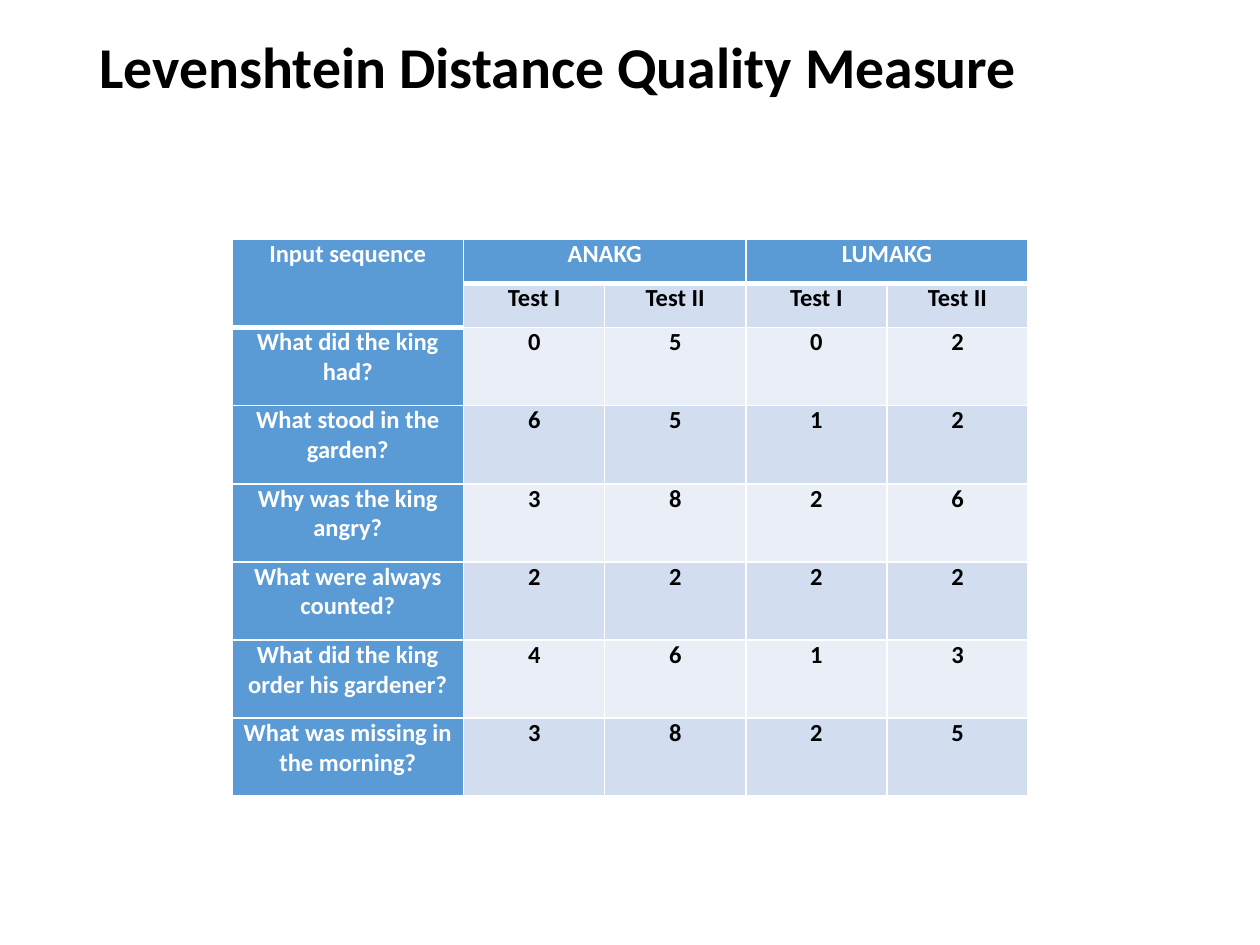
from dataclasses import dataclass

from lxml import etree
from pptx import Presentation
from pptx import util as u
from pptx.dml.color import RGBColor
from pptx.enum import text
from pptx.oxml.ns import qn


@dataclass(frozen=True)
class Theme:
    font: str = "Calibri"
    title_size: float = 33
    table_size: float = 14
    ink: str = "000000"
    paper: str = "FFFFFF"
    accent: str = "5B9BD5"
    bands: tuple = ("D2DEEF", "EAEFF7")
    thin: float = 1
    thick: float = 3


THEME = Theme()
COLUMN_WIDTHS = [1.84] + [1.12] * 4
ROW_HEIGHTS = [0.35] * 2 + [0.62] * 6
ROWS = [
    ("Input sequence", "ANAKG", "", "LUMAKG", ""),
    ("", "Test I", "Test II", "Test I", "Test II"),
    ("What did the king had?", "0", "5", "0", "2"),
    ("What stood in the garden?", "6", "5", "1", "2"),
    ("Why was the king angry?", "3", "8", "2", "6"),
    ("What were always counted?", "2", "2", "2", "2"),
    ("What did the king order his gardener?", "4", "6", "1", "3"),
    ("What was missing in the morning?", "3", "8", "2", "5"),
]
MERGES = [((0, 0), (1, 0)), ((0, 1), (0, 2)), ((0, 3), (0, 4))]


def add_span(para, words, size, color):
    span = para.add_run()
    span.text = words
    span.font.name = THEME.font
    span.font.size = u.Pt(size)
    span.font.bold = True
    span.font.color.rgb = RGBColor.from_string(color)


def set_title(deck, page, words):
    box = page.shapes.title
    box.left, box.top = u.Inches(0.69), u.Inches(-0.17)
    box.width, box.height = deck.slide_width - 2 * box.left, u.Inches(1.45)
    frame = box.text_frame
    frame.word_wrap = True
    frame.auto_size = text.MSO_AUTO_SIZE.NONE
    frame.vertical_anchor = text.MSO_ANCHOR.MIDDLE
    para = frame.paragraphs[0]
    para.alignment = text.PP_ALIGN.LEFT
    para.line_spacing = 0.9
    add_span(para, words, THEME.title_size, THEME.ink)


def add_border(cell, side, width):
    properties = cell._tc.get_or_add_tcPr()
    line = etree.SubElement(properties, qn(f"a:ln{side}"), w=str(u.Pt(width)))
    fill = etree.SubElement(line, qn("a:solidFill"))
    etree.SubElement(fill, qn("a:srgbClr"), val=THEME.paper)


def style_cell(cell, words, row, column):
    is_header = row == 0 or column == 0
    header_end = 1 if column == 0 else 0
    bottom = THEME.thick if row <= header_end else THEME.thin
    top = THEME.thick if row == header_end + 1 else THEME.thin
    for side, width in (("L", THEME.thin), ("R", THEME.thin), ("T", top), ("B", bottom)):
        add_border(cell, side, width)
    cell.fill.solid()
    color = THEME.accent if is_header else THEME.bands[(row + 1) % 2]
    cell.fill.fore_color.rgb = RGBColor.from_string(color)
    cell.margin_left = cell.margin_right = u.Inches(0.07)
    cell.margin_top = cell.margin_bottom = 0
    if words:
        para = cell.text_frame.paragraphs[0]
        para.alignment = text.PP_ALIGN.CENTER
        add_span(para, words, THEME.table_size, THEME.paper if is_header else THEME.ink)


def add_scores(deck, page):
    width, height = u.Inches(sum(COLUMN_WIDTHS)), u.Inches(sum(ROW_HEIGHTS))
    left = (deck.slide_width - width) // 2
    table = page.shapes.add_table(
        len(ROWS), len(COLUMN_WIDTHS), left, u.Inches(1.9), width, height
    ).table
    for column, size in zip(table.columns, COLUMN_WIDTHS):
        column.width = u.Inches(size)
    for row, size in zip(table.rows, ROW_HEIGHTS):
        row.height = u.Inches(size)
    for first, last in MERGES:
        table.cell(*first).merge(table.cell(*last))
    for row, entries in enumerate(ROWS):
        for column, words in enumerate(entries):
            style_cell(table.cell(row, column), words, row, column)


def main():
    deck = Presentation()
    deck.slide_width, deck.slide_height = u.Inches(10), u.Inches(7.5)
    page = deck.slides.add_slide(deck.slide_layouts.get_by_name("Title Only"))
    set_title(deck, page, "Levenshtein Distance Quality Measure")
    add_scores(deck, page)
    deck.save("out.pptx")


if __name__ == "__main__":
    main()
